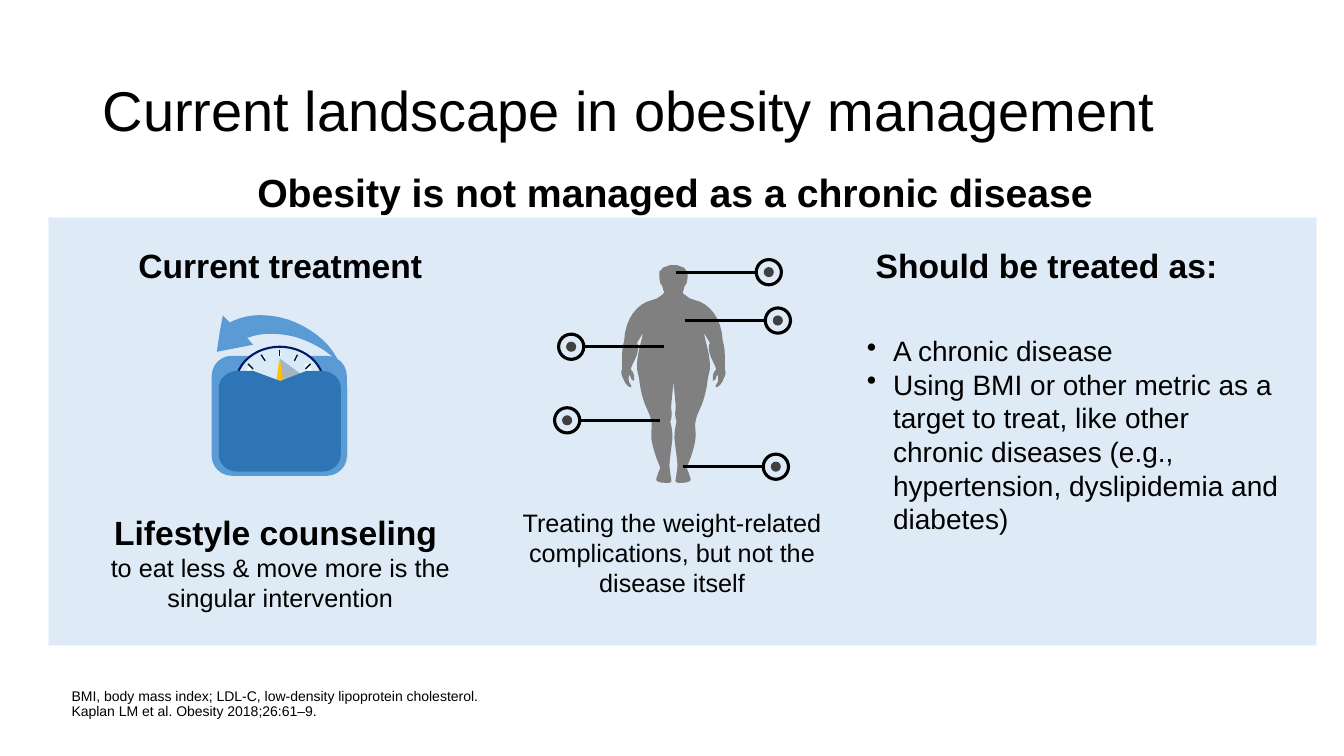
from dataclasses import dataclass

from lxml.etree import SubElement
from pptx import Presentation
from pptx.dml.color import RGBColor
from pptx.enum.shapes import MSO_CONNECTOR, MSO_SHAPE
from pptx.enum.text import MSO_ANCHOR, PP_ALIGN
from pptx.oxml.ns import qn
from pptx.util import Inches, Pt


@dataclass(frozen=True)
class Theme:
    font: str = "Arial"
    text: str = "000000"
    panel: str = "DEEBF7"
    panel_edge: str = "EEF6FC"
    scale_frame: str = "5B9BD5"
    scale_plate: str = "2E75B6"
    dial: str = "D8EAF8"
    dial_edge: str = "001965"
    tick: str = "001423"
    glint: str = "FFFFFF"
    needle: str = "FFC000"
    body: str = "808080"
    callout_dot: str = "404040"
    title_size: int = 40
    subtitle_size: int = 28
    heading_size: int = 24
    bullet_size: int = 20
    caption_size: int = 18
    note_size: int = 10


THEME = Theme()
LINE_BREAK = ("\n", 0, False)

SCALE_SHADE = [(3.32, 3.73), (3.45, 3.84), (3.45, 4.53),
               (3.45, 4.63, 3.35, 4.72, 3.22, 4.72), (2.43, 4.72),
               (2.27, 4.64), (2.24, 4.58), (2.2, 4.55), (2.56, 4)]
NEEDLE_SHADE = [(2.76, 3.79), (2.78, 3.56), (3.01, 3.73), (2.79, 3.83)]
SCALE_PLATE = [(2.36, 3.68), (2.51, 3.68), (2.78, 3.78), (3.04, 3.68), (3.19, 3.68),
               (3.29, 3.68, 3.38, 3.75, 3.38, 3.85), (3.38, 4.51),
               (3.38, 4.61, 3.29, 4.68, 3.19, 4.68), (2.36, 4.68),
               (2.26, 4.68, 2.17, 4.61, 2.17, 4.51), (2.17, 3.85),
               (2.17, 3.75, 2.26, 3.68, 2.36, 3.68)]
ARROW = [(3.34, 3.55), (3.36, 3.61), (3.35, 3.59),
         (3.25, 3.48, 3.09, 3.39, 2.92, 3.34), (2.75, 3.3, 2.59, 3.3, 2.46, 3.35),
         (2.45, 3.35), (2.51, 3.42), (2.15, 3.49), (2.18, 3.29), (2.21, 3.13),
         (2.28, 3.2), (2.32, 3.18), (2.47, 3.11, 2.66, 3.11, 2.86, 3.17),
         (3.08, 3.25, 3.26, 3.39, 3.34, 3.55)]
BODY_CENTRE = 6.68
LEFT_HALF_OF_BODY = [
    (6.68, 2.63), (6.65, 2.63, 6.64, 2.63, 6.62, 2.64), (6.59, 2.65), (6.57, 2.66),
    (6.56, 2.68), (6.54, 2.69), (6.54, 2.76), (6.55, 2.81), (6.57, 2.84), (6.58, 2.88),
    (6.59, 2.9), (6.58, 2.91, 6.58, 2.92, 6.56, 2.93), (6.52, 2.96), (6.46, 2.98),
    (6.33, 3.01, 6.2, 3.15, 6.19, 3.39), (6.17, 3.45, 6.17, 3.51, 6.17, 3.62),
    (6.17, 3.66), (6.16, 3.69, 6.16, 3.72, 6.18, 3.75), (6.2, 3.82, 6.25, 3.85, 6.26, 3.84),
    (6.27, 3.83, 6.25, 3.81, 6.24, 3.79), (6.23, 3.75, 6.24, 3.73, 6.24, 3.72),
    (6.25, 3.73, 6.25, 3.72, 6.26, 3.76), (6.27, 3.77, 6.29, 3.78, 6.29, 3.78),
    (6.29, 3.73), (6.28, 3.69, 6.27, 3.68, 6.26, 3.67), (6.26, 3.65),
    (6.28, 3.59, 6.33, 3.53, 6.33, 3.44), (6.32, 3.4), (6.38, 3.3), (6.37, 3.34),
    (6.36, 3.4, 6.33, 3.48, 6.32, 3.59), (6.32, 3.67), (6.34, 3.76),
    (6.35, 3.88, 6.39, 4, 6.41, 4.04), (6.43, 4.09, 6.45, 4.12, 6.46, 4.18),
    (6.47, 4.21, 6.46, 4.26, 6.46, 4.32), (6.46, 4.41, 6.51, 4.55, 6.55, 4.64),
    (6.53, 4.69), (6.51, 4.75), (6.5, 4.78, 6.56, 4.79, 6.58, 4.79),
    (6.6, 4.79, 6.66, 4.8, 6.66, 4.77), (6.65, 4.7), (6.64, 4.63),
    (6.64, 4.57, 6.66, 4.45, 6.67, 4.35), (6.67, 4.27, 6.66, 4.23, 6.65, 4.19),
    (6.65, 4.16, 6.67, 4.14, 6.66, 4.07), (6.65, 4.05, 6.67, 3.92, 6.68, 3.78)]


def trace(outline, steps=8):
    """Turn corners (x, y) and Bezier curves (two controls, end) into points."""
    points = []
    for entry in outline:
        if len(entry) == 2:
            points.append(entry)
            continue
        knots = [points[-1], entry[:2], entry[2:4], entry[4:]]
        for step in range(1, steps + 1):
            t = step / steps
            weights = ((1 - t) ** 3, 3 * t * (1 - t) ** 2, 3 * t * t * (1 - t), t ** 3)
            points.append(tuple(sum(w * knot[axis] for w, knot in zip(weights, knots))
                                for axis in (0, 1)))
    return points


class SlideBuilder:
    def __init__(self, page, theme):
        self.page = page
        self.theme = theme
        self.layer = page.shapes

    def start_group(self):
        self.layer = self.page.shapes.add_group_shape().shapes

    def end_group(self):
        self.layer = self.page.shapes

    def paint(self, shape, fill, line=None, width=0, alpha=None):
        shape.shadow.inherit = False
        shape.fill.solid()
        shape.fill.fore_color.rgb = RGBColor.from_string(fill)
        if alpha:
            color = shape.fill._xPr.find(".//" + qn("a:srgbClr"))
            SubElement(color, qn("a:alpha")).set("val", str(alpha * 1000))
        if line:
            shape.line.color.rgb = RGBColor.from_string(line)
            shape.line.width = Pt(width)
        else:
            shape.line.fill.background()

    def shape(self, kind, place, fill, line=None, width=0, rotation=0):
        shape = self.layer.add_shape(kind, *map(Inches, place))
        shape.rotation = rotation
        self.paint(shape, fill, line, width)

    def outline(self, points, fill, alpha=None):
        start, *rest = [(Inches(x), Inches(y)) for x, y in points]
        builder = self.layer.build_freeform(*start)
        builder.add_line_segments(rest, close=True)
        self.paint(builder.convert_to_shape(), fill, alpha=alpha)

    def line(self, start, end, color, width):
        line = self.layer.add_connector(MSO_CONNECTOR.STRAIGHT, *map(Inches, start + end))
        line.line.color.rgb = RGBColor.from_string(color)
        line.line.width = Pt(width)
        SubElement(line._element.spPr, qn("a:effectLst"))

    def text(self, place, paragraphs, align=PP_ALIGN.CENTER, anchor=MSO_ANCHOR.TOP,
             spacing=None, inset=None, bullet=False):
        """Each paragraph is a list of spans: wording, size, bold."""
        frame = self.layer.add_textbox(*map(Inches, place)).text_frame
        frame.word_wrap = True
        frame.vertical_anchor = anchor
        if inset is not None:
            frame.margin_left = frame.margin_right = Inches(inset)
            frame.margin_top = frame.margin_bottom = Inches(inset)
        for index, spans in enumerate(paragraphs):
            para = frame.add_paragraph() if index else frame.paragraphs[0]
            para.alignment = align
            para.line_spacing = spacing
            if bullet:
                properties = para._p.get_or_add_pPr()
                properties.set("marL", str(Inches(0.26)))
                properties.set("indent", str(-Inches(0.26)))
                SubElement(properties, qn("a:buChar")).set("char", "•")
            for span in spans:
                if span == LINE_BREAK:
                    para.add_line_break()
                    continue
                run = para.add_run()
                run.text, size, run.font.bold = span
                run.font.size = Pt(size)
                run.font.name = self.theme.font
                run.font.color.rgb = RGBColor.from_string(self.theme.text)

    def callout(self, x, y, side):
        """Line from the body at (x, y) to a ring; side is 1 for right, -1 for left."""
        self.line((x, y), (x + side * 0.85, y), self.theme.text, 2.25)
        for size, fill, edge in ((0.25, self.theme.panel, self.theme.text),
                                 (0.1, self.theme.callout_dot, None)):
            left = x + side * 0.925 - size / 2
            self.shape(MSO_SHAPE.OVAL, (left, y - size / 2, size, size), fill, edge, 2.25)


def draw_scale(builder):
    theme = builder.theme
    builder.start_group()
    builder.shape(MSO_SHAPE.ROUNDED_RECTANGLE, (2.1, 3.53, 1.34, 1.19), theme.scale_frame)
    builder.shape(MSO_SHAPE.OVAL, (2.34, 3.44, 0.87, 0.73), theme.dial, theme.dial_edge, 1.5)
    for *place, rotation in ((2.76, 3.5, 0.03, 0.03, 0), (2.6, 3.53, 0.03, 0.03, 0),
                             (2.45, 3.63, 0.04, 0.09, 24.2), (2.92, 3.54, 0.03, 0.03, 0),
                             (3.03, 3.6, 0.05, 0.1, 328.1)):
        builder.shape(MSO_SHAPE.OVAL, place, theme.glint, rotation=rotation)
    builder.outline(trace(SCALE_SHADE), theme.scale_frame, alpha=24)
    for start, end in (((2.77, 3.47), (2.77, 3.53)), ((2.59, 3.52), (2.63, 3.58)),
                       ((2.46, 3.61), (2.51, 3.66)), ((2.95, 3.52), (2.92, 3.58)),
                       ((3.08, 3.61), (3.03, 3.66))):
        builder.line(start, end, theme.tick, 1)
    builder.outline(NEEDLE_SHADE, theme.tick, alpha=24)
    builder.shape(MSO_SHAPE.ISOSCELES_TRIANGLE, (2.74, 3.55, 0.07, 0.23), theme.needle)
    builder.outline(trace(SCALE_PLATE), theme.scale_plate)
    builder.outline(trace(ARROW), theme.scale_frame)
    builder.end_group()


def draw_body(builder):
    left = trace(LEFT_HALF_OF_BODY)
    right = [(2 * BODY_CENTRE - x, y) for x, y in reversed(left)]
    builder.start_group()
    builder.outline(left + right, builder.theme.body)
    for x, y, side in ((6.77, 4.63, 1), (6.7, 2.7, 1), (6.79, 3.18, 1),
                       (6.59, 3.44, -1), (6.55, 4.17, -1)):
        builder.callout(x, y, side)
    builder.text((4.99, 4.98, 3.35, 1.01), [[
        ("Treating the weight-related complications, but not the disease itself",
         builder.theme.caption_size, False)]])
    builder.end_group()


def main():
    deck = Presentation()
    deck.slide_width, deck.slide_height = Inches(13.33), Inches(7.5)
    builder = SlideBuilder(deck.slides.add_slide(deck.slide_layouts[6]), THEME)
    builder.text((0.92, 0.4, 11.5, 1.45),
                 [[("Current landscape in obesity management", THEME.title_size, False)]],
                 PP_ALIGN.LEFT, MSO_ANCHOR.MIDDLE, 0.9)
    builder.text((0.71, 6.79, 11.71, 0.35), [[
        ("BMI, body mass index; LDL-C, low-density lipoprotein cholesterol.",
         THEME.note_size, False), LINE_BREAK,
        ("Kaplan LM et al. Obesity 2018;26:61–9.", THEME.note_size, False)]],
        PP_ALIGN.LEFT, MSO_ANCHOR.BOTTOM, 0.9, inset=0)
    builder.shape(MSO_SHAPE.RECTANGLE, (0.48, 2.16, 12.58, 4.24),
                  THEME.panel, THEME.panel_edge, 0.75)
    builder.text((2.19, 1.62, 9.01, 0.57), [[
        ("Obesity is not managed as a chronic disease", THEME.subtitle_size, True)]])
    builder.text((0.9, 5.03, 3.76, 1.11), [[
        ("Lifestyle counseling ", THEME.heading_size, True), LINE_BREAK,
        ("to eat less & move more is the singular intervention", THEME.caption_size, False)]])
    draw_scale(builder)
    builder.text((8.5, 3.26, 4.37, 1.78), [
        [("A chronic disease", THEME.bullet_size, False)],
        [("Using BMI or other metric as a target to treat, like other chronic diseases "
          "(e.g., hypertension, dyslipidemia and diabetes)", THEME.bullet_size, False)]],
        PP_ALIGN.LEFT, bullet=True)
    for left, heading in ((0.9, "Current treatment"), (8.5, "Should be treated as:")):
        builder.text((left, 2.38, 3.76, 0.5), [[(heading, THEME.heading_size, True)]])
    draw_body(builder)
    deck.save("out.pptx")


if __name__ == "__main__":
    main()
